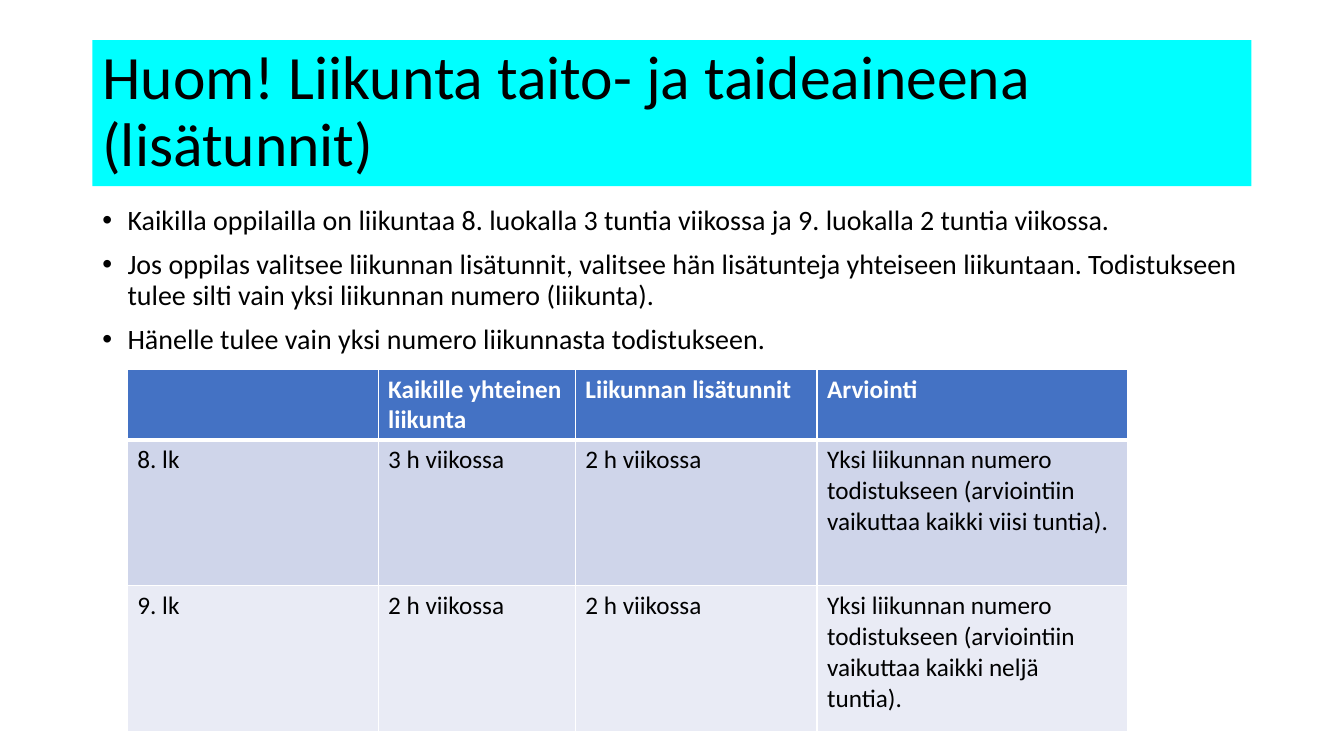
from lxml import etree
from pptx import Presentation
from pptx.dml.color import RGBColor
from pptx.enum.shapes import MSO_SHAPE
from pptx.enum.text import MSO_ANCHOR, PP_ALIGN
from pptx.oxml.ns import qn
from pptx.util import Cm, Pt

RECTANGLE = MSO_SHAPE.RECTANGLE
MIDDLE = MSO_ANCHOR.MIDDLE
TOP = MSO_ANCHOR.TOP
LEFT = PP_ALIGN.LEFT

BLACK = RGBColor(0x00, 0x00, 0x00)
WHITE = RGBColor(0xFF, 0xFF, 0xFF)
CYAN = RGBColor(0x00, 0xFF, 0xFF)
HEADER_BLUE = RGBColor(0x44, 0x72, 0xC4)
ROW_BLUE = RGBColor(0xCF, 0xD5, 0xEA)
ROW_PALE = RGBColor(0xE9, 0xEB, 0xF5)

TITLE = "Huom! Liikunta taito- ja taideaineena (lisätunnit)"
POINTS = [
    "Kaikilla oppilailla on liikuntaa 8. luokalla 3 tuntia viikossa ja 9. luokalla 2 tuntia viikossa.",
    "Jos oppilas valitsee liikunnan lisätunnit, valitsee hän lisätunteja yhteiseen liikuntaan. "
    "Todistukseen tulee silti vain yksi liikunnan numero (liikunta).",
    "Hänelle tulee vain yksi numero liikunnasta todistukseen.",
]
LESSONS = [
    ["", "Kaikille yhteinen liikunta", "Liikunnan lisätunnit", "Arviointi"],
    ["8. lk", "3 h viikossa", "2 h viikossa",
     "Yksi liikunnan numero todistukseen (arviointiin vaikuttaa kaikki viisi tuntia)."],
    ["9. lk", "2 h viikossa", "2 h viikossa",
     "Yksi liikunnan numero todistukseen (arviointiin vaikuttaa kaikki neljä tuntia)."],
]
COLUMN_WIDTHS = [6.32, 4.97, 6.09, 7.82]
ROW_HEIGHTS = [1.76, 3.68, 3.68]
ROW_FILLS = [HEADER_BLUE, ROW_BLUE, ROW_PALE]


def write(para, text, size=18, color=BLACK, bold=False, spacing=1.0, before=0, bullet=False, font="Calibri"):
    para.alignment = LEFT
    para.line_spacing = spacing
    para.space_before = Pt(before)
    if bullet:
        properties = para._p.get_or_add_pPr()
        properties.set("marL", str(Cm(0.635)))
        properties.set("indent", str(-Cm(0.635)))
        etree.SubElement(properties, qn("a:buFont"), typeface="Arial")
        etree.SubElement(properties, qn("a:buChar"), char="•")
    span = para.add_run()
    span.text = text
    span.font.name = font
    span.font.size = Pt(size)
    span.font.bold = bold
    span.font.color.rgb = color


def set_borders(cell, top, bottom):
    properties = cell._tc.get_or_add_tcPr()
    sides = {"a:lnL": 1, "a:lnR": 1, "a:lnT": top, "a:lnB": bottom}
    for position, (side, width) in enumerate(sides.items()):
        line = etree.Element(qn(side), w=str(Pt(width)))
        fill = etree.SubElement(line, qn("a:solidFill"))
        etree.SubElement(fill, qn("a:srgbClr"), val=str(WHITE))
        properties.insert(position, line)


class SlideBuilder:
    def __init__(self, page, font):
        self.page = page
        self.font = font

    def banner(self, text, left, top, width, height):
        box = self.page.shapes.add_shape(RECTANGLE, Cm(left), Cm(top), Cm(width), Cm(height))
        box.shadow.inherit = False
        box.fill.solid()
        box.fill.fore_color.rgb = CYAN
        box.line.fill.background()
        frame = box.text_frame
        frame.word_wrap = True
        frame.vertical_anchor = MIDDLE
        write(frame.paragraphs[0], text, size=44, spacing=0.9, font=self.font)

    def bullets(self, texts, left, top, width, height):
        frame = self.page.shapes.add_textbox(Cm(left), Cm(top), Cm(width), Cm(height)).text_frame
        frame.word_wrap = True
        frame.vertical_anchor = TOP
        for index, text in enumerate(texts):
            para = frame.add_paragraph() if index else frame.paragraphs[0]
            write(para, text, size=20, spacing=0.9, before=10, bullet=True, font=self.font)

    def table(self, rows, left, top):
        table = self.page.shapes.add_table(
            len(rows), len(COLUMN_WIDTHS), Cm(left), Cm(top),
            Cm(sum(COLUMN_WIDTHS)), Cm(sum(ROW_HEIGHTS))).table
        for column, width in zip(table.columns, COLUMN_WIDTHS):
            column.width = Cm(width)
        for index, texts in enumerate(rows):
            table.rows[index].height = Cm(ROW_HEIGHTS[index])
            header = index == 0
            for cell, text in zip(table.rows[index].cells, texts):
                cell.fill.solid()
                cell.fill.fore_color.rgb = ROW_FILLS[index]
                set_borders(cell, top=3 if index == 1 else 1, bottom=3 if header else 1)
                if text:
                    write(cell.text_frame.paragraphs[0], text, bold=header,
                          color=WHITE if header else BLACK, font=self.font)


def main():
    deck = Presentation()
    deck.slide_width = Cm(33.87)
    deck.slide_height = Cm(19.05)
    builder = SlideBuilder(deck.slides.add_slide(deck.slide_layouts[6]), "Calibri")
    builder.banner(TITLE, 2.33, 1.01, 29.21, 3.68)
    builder.bullets(POINTS, 2.33, 5.08, 29.21, 12.09)
    builder.table(LESSONS, 3.21, 9.3)
    deck.save("out.pptx")


if __name__ == "__main__":
    main()
